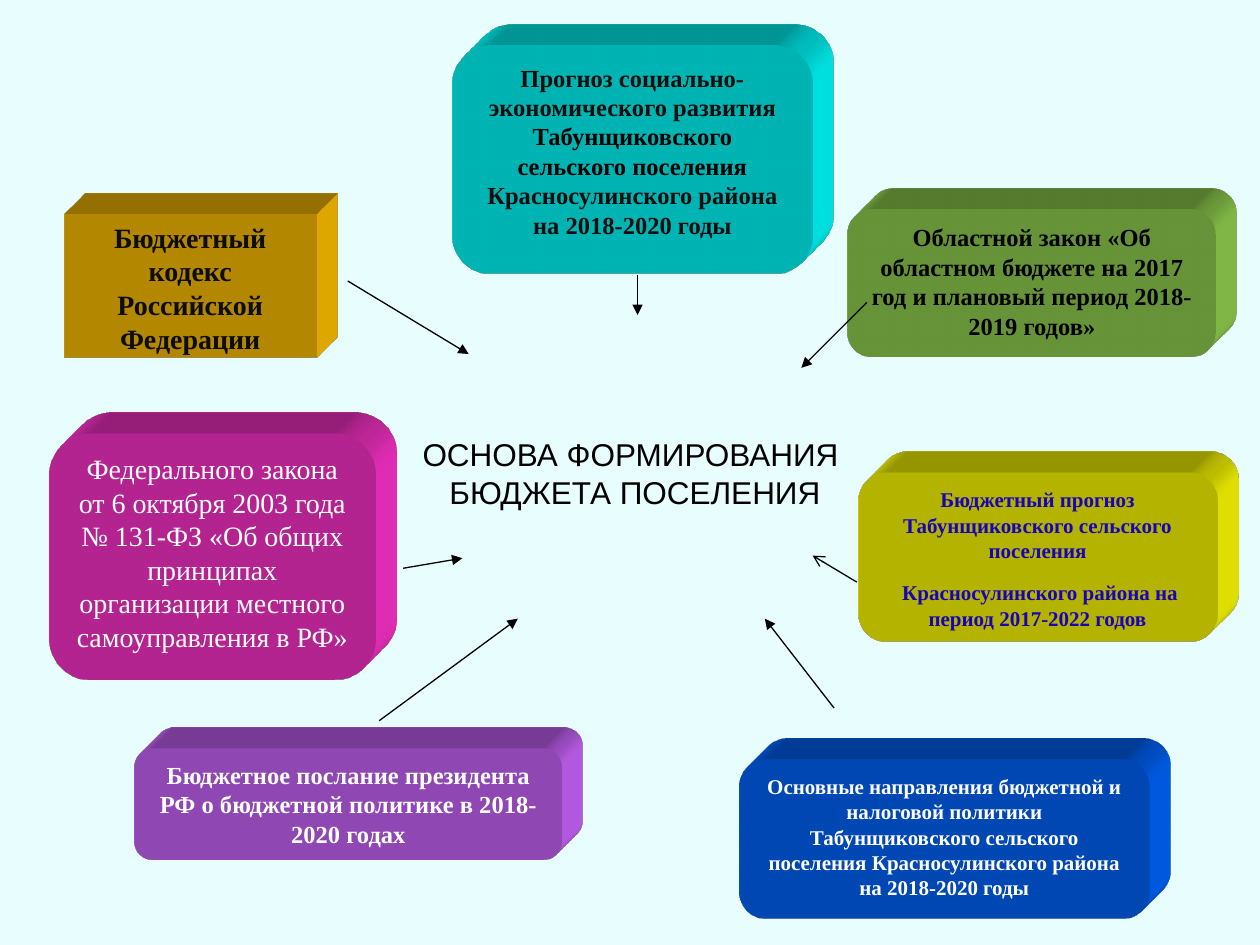
from lxml.etree import SubElement
from pptx import Presentation
from pptx.dml.color import RGBColor
from pptx.enum.shapes import MSO_CONNECTOR as CONNECTOR, MSO_SHAPE as SHAPE
from pptx.enum.text import MSO_ANCHOR as ANCHOR, MSO_AUTO_SIZE as AUTO_SIZE, PP_ALIGN as ALIGN
from pptx.oxml.ns import qn
from pptx.util import Inches, Pt

BLACK, INK, WHITE, NAVY = "000000", "0D0D0D", "FFFFFF", "1903B9"

SOURCES = [
    ((0.51, 1.7, 2, 1.14), 0, "FFC000", 16, True,
     [[("Бюджетный кодекс Российской Федерации", INK)]]),
    ((0.39, 3.44, 2.59, 1.95), 0.167, "FF33CC", 16, False,
     [[("Федерального закона от 6 октября 2003 года № 131-ФЗ «Об общих принципах "
        "организации местного самоуправления в РФ»", WHITE)]]),
    ((1.07, 5.94, 3.39, 0.88), 0.167, "CC66FF", 14, True,
     [[("Бюджетное послание президента РФ о бюджетной политике в 2018-2020 годах", WHITE)]]),
    ((6.73, 1.66, 2.92, 1.17), 0.167, "92D050", 14, True,
     [[("Областной закон «Об областном бюджете на 2017 год и плановый период "
        "2018-2019 годов»", BLACK)]]),
    ((3.59, 0.36, 2.86, 1.81), 0.167, "00FFFF", 14, True,
     [[("Прогноз социально-экономического развития ", INK),
       ("Табунщиковского сельского поселения ", BLACK),
       ("Красносулинского района на 2018-2020 годы", INK)]]),
    ((6.81, 3.75, 2.85, 1.34), 0.167, "FFFF00", 12, True,
     [[("Бюджетный прогноз Табунщиковского сельского поселения", NAVY)],
      [(" Красносулинского района на период 2017-2022 годов", NAVY)]]),
    ((5.87, 6.03, 3.25, 1.26), 0.167, "0066FF", 12, True,
     [[("Основные направления бюджетной и налоговой политики Табунщиковского сельского "
        "поселения Красносулинского района на 2018-2020 годы", WHITE)]]),
]

ARROWS = [
    ((2.76, 2.23), (3.72, 2.81), "triangle"),
    ((3.2, 4.51), (3.67, 4.43), "triangle"),
    ((3.01, 5.72), (4.11, 4.91), "triangle"),
    ((5.06, 2.18), (5.06, 2.5), "triangle"),
    ((6.88, 2.4), (6.36, 2.92), "triangle"),
    ((6.62, 5.62), (6.07, 4.91), "triangle"),
    ((6.8, 4.62), (6.45, 4.41), "arrow"),
]


def color(value):
    return RGBColor.from_string(value)


def format_run(run, font_name, size, ink, bold=False):
    run.font.name = font_name
    run.font.size = Pt(size)
    run.font.bold = bold
    run.font.color.rgb = color(ink)


def extrude(block, side_color):
    properties = block._element.spPr
    scene = SubElement(properties, qn("a:scene3d"))
    SubElement(scene, qn("a:camera"), prst="legacyObliqueTopRight")
    SubElement(scene, qn("a:lightRig"), rig="legacyFlat3", dir="b")
    solid = SubElement(properties, qn("a:sp3d"), extrusionH="430200", prstMaterial="legacyMatte")
    for bevel in ("a:bevelT", "a:bevelB"):
        SubElement(solid, qn(bevel), w="13500", h="13500", prst="angle")
    side = SubElement(solid, qn("a:extrusionClr"))
    SubElement(side, qn("a:srgbClr"), val=side_color)


def add_source(slide, place, rounding, fill, size, bold, paragraphs):
    block = slide.shapes.add_shape(SHAPE.ROUNDED_RECTANGLE, *map(Inches, place))
    block.adjustments[0] = rounding
    block.fill.solid()
    block.fill.fore_color.rgb = color(fill)
    block.line.fill.background()
    block.shadow.inherit = False
    extrude(block, fill)
    frame = block.text_frame
    frame.word_wrap = True
    frame.vertical_anchor = ANCHOR.TOP
    for index, pieces in enumerate(paragraphs):
        paragraph = frame.add_paragraph() if index else frame.paragraphs[0]
        paragraph.alignment = ALIGN.CENTER
        paragraph.space_after = Pt(10)
        for text, ink in pieces:
            run = paragraph.add_run()
            run.text = text
            format_run(run, "Times New Roman", size, ink, bold)


def add_arrow(slide, start, end, head):
    arrow = slide.shapes.add_connector(CONNECTOR.STRAIGHT, *map(Inches, start + end))
    arrow.line.color.rgb = color(BLACK)
    arrow.line.width = Pt(0.75)
    SubElement(arrow.line._get_or_add_ln(), qn("a:tailEnd"), type=head)
    SubElement(arrow._element.spPr, qn("a:effectLst"))


def set_title(slide):
    title = slide.shapes.title
    title.left, title.top, title.width, title.height = map(Inches, (3.24, 3.4, 3.53, 0.7))
    frame = title.text_frame
    frame.text = "ОСНОВА ФОРМИРОВАНИЯ\n БЮДЖЕТА ПОСЕЛЕНИЯ"
    frame.word_wrap = False
    frame.auto_size = AUTO_SIZE.SHAPE_TO_FIT_TEXT
    frame.vertical_anchor = ANCHOR.MIDDLE
    for paragraph in frame.paragraphs:
        paragraph.alignment = ALIGN.CENTER
        paragraph.space_before = Pt(0)
        format_run(paragraph.runs[0], "Arial", 18, BLACK)


def main():
    deck = Presentation()
    deck.slide_width, deck.slide_height = Inches(10), Inches(7.5)
    slide = deck.slides.add_slide(deck.slide_layouts.get_by_name("Title Only"))
    slide.background.fill.solid()
    slide.background.fill.fore_color.rgb = color("E8FDFE")
    set_title(slide)
    for source in SOURCES:
        add_source(slide, *source)
    for arrow in ARROWS:
        add_arrow(slide, *arrow)
    deck.save("out.pptx")


if __name__ == "__main__":
    main()
